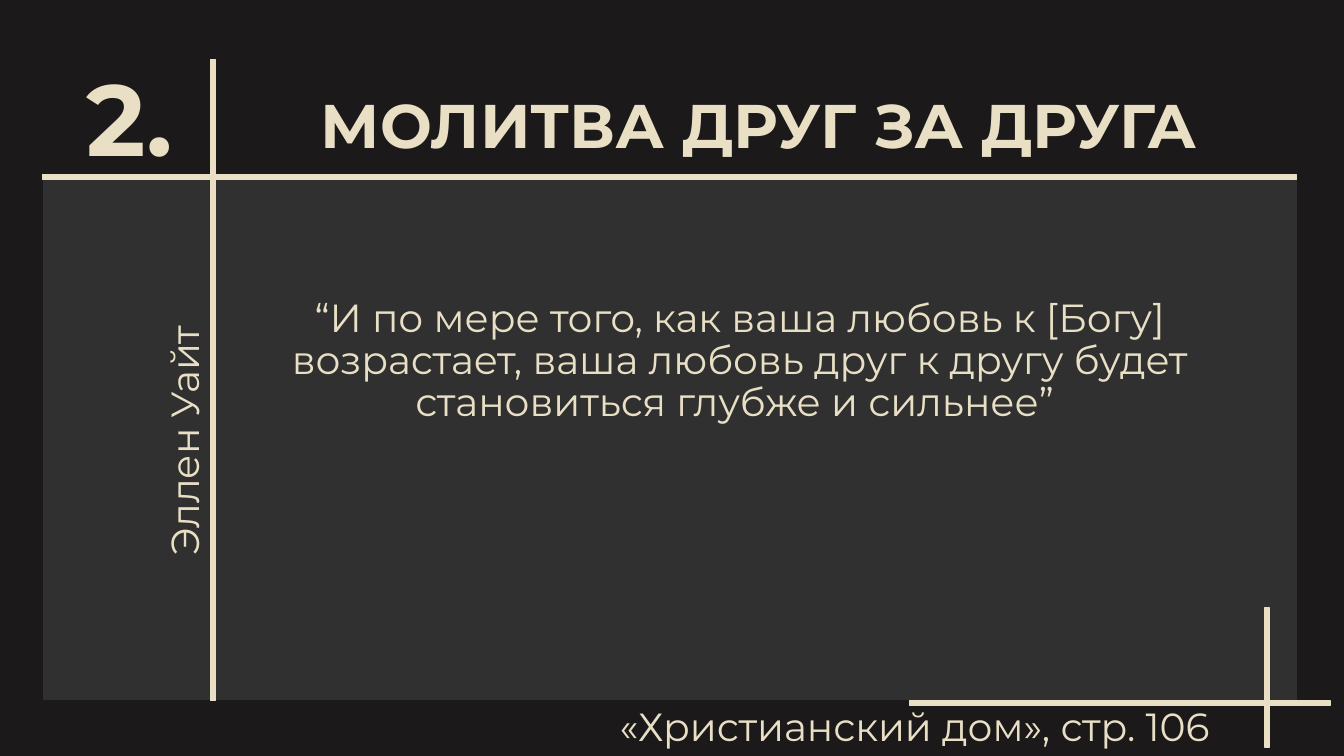
from dataclasses import dataclass

from pptx import Presentation
from pptx.dml.color import RGBColor
from pptx.enum.shapes import MSO_SHAPE
from pptx.enum.text import MSO_ANCHOR, PP_ALIGN
from pptx.util import Inches, Pt


@dataclass(frozen=True)
class Theme:
    font: str = "Montserrat"
    background: RGBColor = RGBColor(0x1C, 0x19, 0x1A)
    panel: RGBColor = RGBColor(0x30, 0x30, 0x30)
    cream: RGBColor = RGBColor(0xE8, 0xDF, 0xC5)
    number_size: int = 72
    title_size: int = 44
    text_size: int = 28
    rule: float = 0.05
    border: int = 1


def apply(target, values):
    for name, value in values.items():
        setattr(target, name, value)


class QuoteSlide:
    def __init__(self, deck, theme):
        self.theme = theme
        self.slide = deck.slides.add_slide(deck.slide_layouts[6])
        self.paint(self.slide.background.fill, theme.background)

    def paint(self, fill, color):
        fill.solid()
        fill.fore_color.rgb = color

    def block(self, left, top, width, height, color):
        area = map(Inches, (left, top, width, height))
        block = self.slide.shapes.add_shape(MSO_SHAPE.RECTANGLE, *area)
        block.shadow.inherit = False
        self.paint(block.fill, color)
        self.paint(block.line.fill, color)
        block.line.width = Pt(self.theme.border)

    def horizontal_rule(self, left, top, length):
        self.block(left, top, length, self.theme.rule, self.theme.cream)

    def vertical_rule(self, left, top, length):
        self.block(left, top, self.theme.rule, length, self.theme.cream)

    def text(self, wording, left, top, width, height, size,
             bold=False, anchor=MSO_ANCHOR.TOP, inset=0.05, rotation=0):
        area = map(Inches, (left, top, width, height))
        box = self.slide.shapes.add_textbox(*area)
        box.rotation = rotation
        apply(box.text_frame, {
            "word_wrap": True,
            "vertical_anchor": anchor,
            "margin_top": Inches(inset),
        })
        paragraph = box.text_frame.paragraphs[0]
        apply(paragraph, {"alignment": PP_ALIGN.CENTER, "line_spacing": 0.9})
        run = paragraph.add_run()
        run.text = wording
        apply(run.font, {"name": self.theme.font, "size": Pt(size), "bold": bold})
        run.font.color.rgb = self.theme.cream


def main():
    deck = Presentation()
    apply(deck, {"slide_width": Inches(13.33), "slide_height": Inches(7.5)})
    theme = Theme()
    page = QuoteSlide(deck, theme)
    heading = {"bold": True, "anchor": MSO_ANCHOR.MIDDLE}

    page.block(0.43, 1.77, 12.43, 5.17, theme.panel)
    page.text("2.", 0.45, 0.6, 1.67, 1.26, theme.number_size, **heading)
    page.text(
        "“И по мере того, как ваша любовь к [Богу] возрастает, ваша любовь "
        "друг к другу будет становиться глубже и сильнее” ",
        2.14, 1.73, 10.39, 4.76, theme.text_size, inset=1.23)
    page.text("МОЛИТВА ДРУГ ЗА ДРУГА", 2.24, 0.55, 10.58, 1.45,
              theme.title_size, **heading)

    page.vertical_rule(2.09, 0.59, 6.36)
    page.horizontal_rule(0.42, 1.73, 12.44)
    page.vertical_rule(12.54, 6.03, 1.38)
    page.horizontal_rule(9.02, 6.95, 4.17)

    page.text("Эллен Уайт", -0.03, 4.07, 3.84, 0.6, theme.text_size, rotation=270)
    page.text("«Христианский дом», стр. 106", 5.71, 6.97, 6.72, 0.6, theme.text_size)

    deck.save("out.pptx")


if __name__ == "__main__":
    main()
